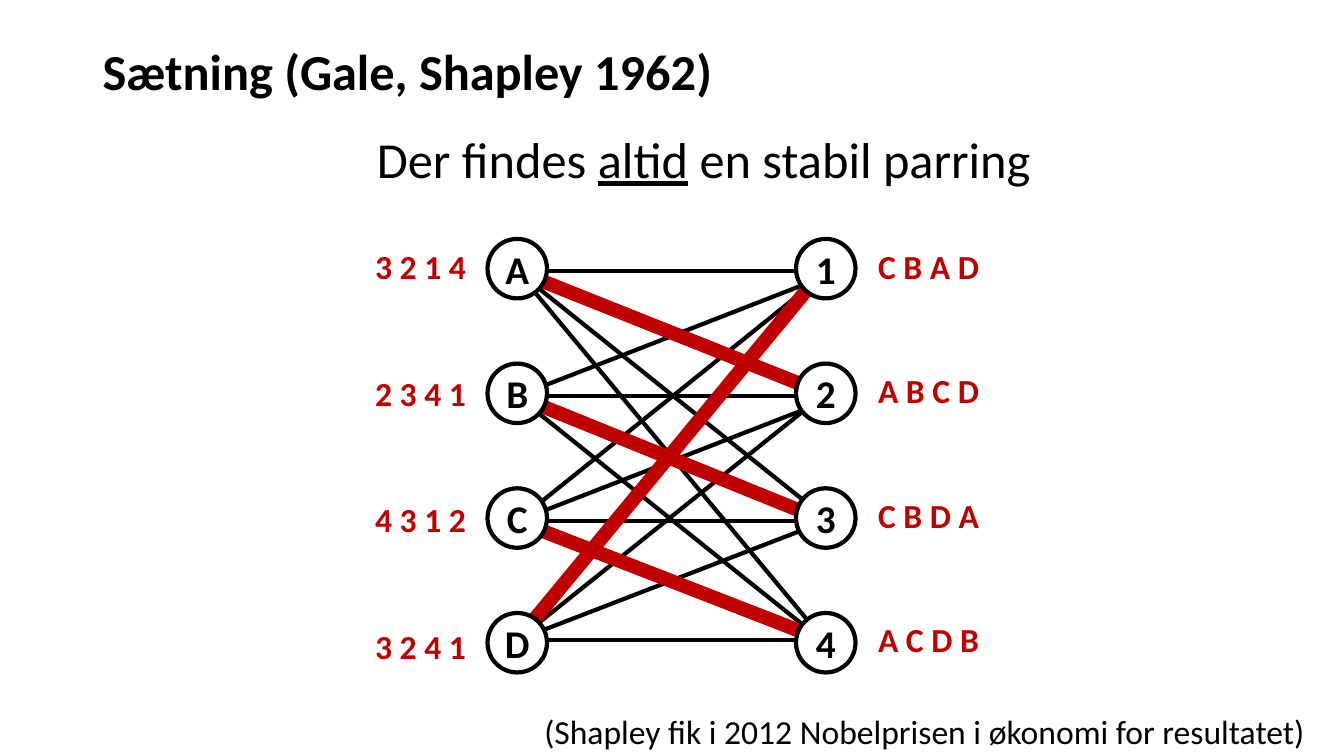
from dataclasses import dataclass

from lxml import etree
from pptx import Presentation
from pptx.dml.color import RGBColor
from pptx.enum.shapes import MSO_CONNECTOR, MSO_SHAPE
from pptx.enum.text import MSO_ANCHOR, PP_ALIGN
from pptx.oxml.ns import qn
from pptx.slide import Slide
from pptx.text.text import TextFrame
from pptx.util import Inches, Pt

STRAIGHT = MSO_CONNECTOR.STRAIGHT
OVAL = MSO_SHAPE.OVAL
MIDDLE = MSO_ANCHOR.MIDDLE
LEFT, CENTER, RIGHT = PP_ALIGN.LEFT, PP_ALIGN.CENTER, PP_ALIGN.RIGHT

BLACK = RGBColor(0, 0, 0)
WHITE = RGBColor(255, 255, 255)
RED = RGBColor(0xC0, 0, 0)
FONT = "Calibri"

LEFT_X, RIGHT_X = 5.13, 8.19
DIAMETER = 0.59
NODE_TOP, NODE_STEP = 2.37, 1.237
LABEL_TOP, LABEL_W, LABEL_H = 2.39, 1.59, 0.5


@dataclass
class Run:
    text: str
    bold: bool = False
    underline: bool = False


@dataclass
class Side:
    """One column of nodes with their preference lists."""
    names: str
    preferences: list[str]
    center_x: float
    label_x: float
    label_step: float
    align: PP_ALIGN


@dataclass
class Edges:
    """Edges from one left node to every right node; match is the paired one."""
    start_y: float
    end_ys: tuple[float, ...]
    match: int


SIDES = [
    Side("1234", ["C B A D", "A B C D", "C B D A", "A C D B"],
         RIGHT_X, 8.61, 1.233, LEFT),
    Side("ABCD", ["3 2 1 4", "2 3 4 1", "4 3 1 2", "3 2 4 1"],
         LEFT_X, 3.13, 1.257, RIGHT),
]
EDGES = [
    Edges(2.69, (2.69, 3.91, 5.14, 6.37), 1),
    Edges(3.93, (2.74, 3.93, 5.17, 6.38), 2),
    Edges(5.17, (2.71, 3.98, 5.17, 6.36), 3),
    Edges(6.35, (2.65, 3.90, 5.17, 6.35), 0),
]


def write(tf: TextFrame, runs: list[Run], size: int, color: RGBColor,
          align: PP_ALIGN, spacing: float = 1.0) -> None:
    p = tf.paragraphs[0]
    p.alignment = align
    p.line_spacing = spacing
    for run in runs:
        r = p.add_run()
        r.text = run.text
        r.font.name = FONT
        r.font.size = Pt(size)
        r.font.bold = run.bold
        r.font.underline = run.underline
        r.font.color.rgb = color


def add_text(s: Slide, x: float, y: float, w: float, h: float, runs: list[Run],
             size: int, color: RGBColor, align: PP_ALIGN,
             spacing: float = 1.0) -> None:
    tf = s.shapes.add_textbox(Inches(x), Inches(y), Inches(w), Inches(h)).text_frame
    tf.word_wrap = True
    write(tf, runs, size, color, align, spacing)


def add_edge(s: Slide, start_y: float, end_y: float, color: RGBColor,
             width: float) -> None:
    line = s.shapes.add_connector(STRAIGHT, Inches(LEFT_X), Inches(start_y),
                                  Inches(RIGHT_X), Inches(end_y))
    line.line.color.rgb = color
    line.line.width = Pt(width)
    etree.SubElement(line._element.spPr, qn("a:effectLst"))


def add_node(s: Slide, name: str, center_x: float, top: float) -> None:
    sp = s.shapes.add_shape(OVAL, Inches(center_x - DIAMETER / 2), Inches(top),
                            Inches(DIAMETER), Inches(DIAMETER))
    sp.shadow.inherit = False
    sp.fill.solid()
    sp.fill.fore_color.rgb = WHITE
    sp.line.color.rgb = BLACK
    sp.line.width = Pt(3)
    tf = sp.text_frame
    tf.word_wrap = False
    tf.vertical_anchor = MIDDLE
    tf.margin_left = tf.margin_right = tf.margin_top = tf.margin_bottom = 0
    write(tf, [Run(name, bold=True)], 28, BLACK, CENTER)


def add_statement(s: Slide) -> None:
    """Heading, theorem and footnote, sharing one column."""
    x, w = 0.92, 12.12
    theorem = [Run("Der findes "), Run("altid", underline=True),
               Run(" en stabil parring")]
    footnote = [Run("(Shapley fik i 2012 Nobelprisen i økonomi for resultatet)")]
    add_text(s, x, 0.42, w, 0.65, [Run("Sætning (Gale, Shapley 1962)", bold=True)],
             36, BLACK, LEFT, 0.9)
    add_text(s, x, 1.29, w, 0.65, theorem, 36, BLACK, CENTER, 0.9)
    add_text(s, x, 7.05, w, 0.45, footnote, 24, BLACK, RIGHT, 0.9)


def add_matching(s: Slide) -> None:
    for edges in EDGES:
        for end_y in edges.end_ys:
            add_edge(s, edges.start_y, end_y, BLACK, 3)
    for side in SIDES:
        for row, preference in enumerate(side.preferences):
            add_text(s, side.label_x, LABEL_TOP + row * side.label_step, LABEL_W,
                     LABEL_H, [Run(preference, bold=True)], 24, RED, side.align)
    for edges in EDGES:
        add_edge(s, edges.start_y, edges.end_ys[edges.match], RED, 10)
    for side in SIDES:
        for row, name in enumerate(side.names):
            add_node(s, name, side.center_x, NODE_TOP + row * NODE_STEP)


def main() -> None:
    prs = Presentation()
    prs.slide_width, prs.slide_height = Inches(13.33), Inches(7.5)
    s = prs.slides.add_slide(prs.slide_layouts[6])
    add_statement(s)
    add_matching(s)
    prs.save("out.pptx")


if __name__ == "__main__":
    main()
